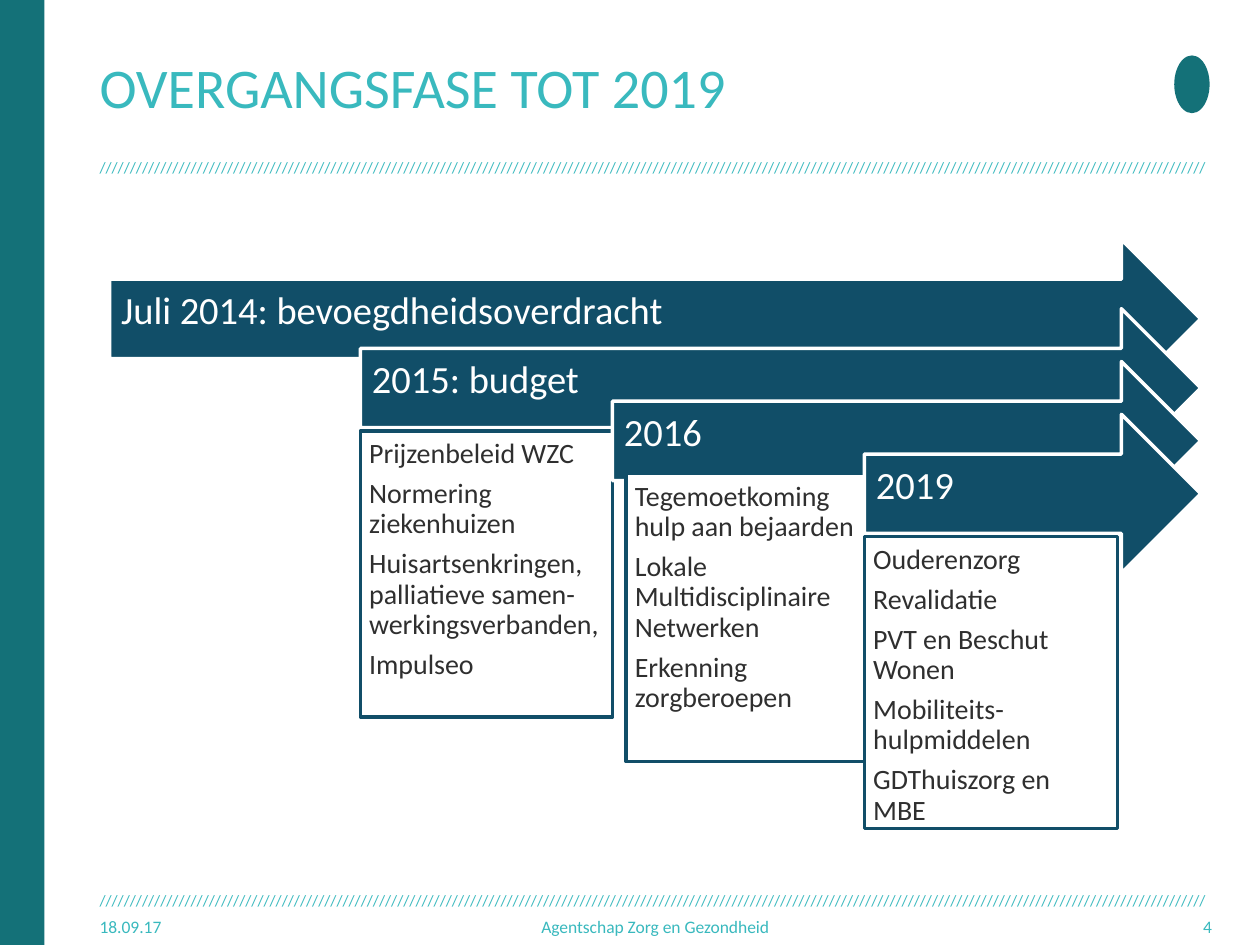
"""Build the slide on the transition phase until 2019."""
from pptx import Presentation
from pptx.dml.color import RGBColor
from pptx.enum.shapes import MSO_SHAPE
from pptx.enum.text import MSO_ANCHOR, PP_ALIGN
from pptx.util import Pt

RECT, OVAL, ARROW = MSO_SHAPE.RECTANGLE, MSO_SHAPE.OVAL, MSO_SHAPE.RIGHT_ARROW
TOP, MIDDLE = MSO_ANCHOR.TOP, MSO_ANCHOR.MIDDLE
LEFT, CENTER, RIGHT = PP_ALIGN.LEFT, PP_ALIGN.CENTER, PP_ALIGN.RIGHT

TEAL = RGBColor(0x14, 0x71, 0x78)
AQUA = RGBColor(0x39, 0xB9, 0xBE)
NAVY = RGBColor(0x11, 0x4E, 0x68)
INK = RGBColor(0x2F, 0x2F, 0x2F)
WHITE = RGBColor(0xFF, 0xFF, 0xFF)

ARROW_RIGHT, ARROW_HEIGHT = 686.2, 90.7
MARGIN = 56.9

ARROWS = [
    (62.6, 136.9, "Juli 2014: bevoegdheidsoverdracht", None, []),
    (206, 176.4, "2015: budget", (206, 246.2, 144, 163.6),
     ["Prijzenbeleid WZC", "Normering ziekenhuizen",
      "Huisartsenkringen, palliatieve samen-werkingsverbanden,", "Impulseo"]),
    (350, 206.6, "2016", (357.8, 270.6, 144, 164.7),
     ["Tegemoetkoming hulp aan bejaarden",
      "Lokale Multidisciplinaire Netwerken", "Erkenning zorgberoepen"]),
    (494, 236.8, "2019", (494, 306.6, 144.7, 166.9),
     ["Ouderenzorg", "Revalidatie", "PVT en Beschut Wonen",
      "Mobiliteits-hulpmiddelen", "GDThuiszorg en MBE"]),
]


class Deck:
    """Hold the style and the current slide."""

    font = "Calibri"

    def __init__(self, prs):
        self.slide = prs.slides.add_slide(prs.slide_layouts[5])

    def set_text(self, sp, lines, size, color, align=LEFT, anchor=TOP,
                 insets=(0, 0, 0, 0), wrap=True, flow=False):
        """Fill a shape with paragraphs."""
        tf = sp.text_frame
        tf.word_wrap, tf.vertical_anchor = wrap, anchor
        (tf.margin_left, tf.margin_top,
         tf.margin_right, tf.margin_bottom) = map(Pt, insets)
        tf.text = "\n".join(lines)
        for p in tf.paragraphs:
            p.alignment = align
            p.font.name, p.font.size = self.font, Pt(size)
            p.font.color.rgb = color
            if flow:
                p.line_spacing, p.space_after = 0.9, Pt(0.35 * size)

    def title(self, text, box):
        """Move and format the title placeholder."""
        sp = self.slide.shapes.title
        sp.left, sp.top, sp.width, sp.height = map(Pt, box)
        self.set_text(sp, [text], 32, AQUA, anchor=MIDDLE)

    def text(self, text, box, size, align=LEFT, anchor=MIDDLE, wrap=True):
        """Add a text box."""
        sp = self.slide.shapes.add_textbox(*map(Pt, box))
        self.set_text(sp, [text], size, AQUA, align, anchor, wrap=wrap)

    def shape(self, kind, box, fill, line=None):
        """Add a preset shape."""
        sp = self.slide.shapes.add_shape(kind, *map(Pt, box))
        sp.shadow.inherit = False
        sp.fill.solid()
        sp.fill.fore_color.rgb = fill
        if line is None:
            sp.line.fill.background()
        else:
            sp.line.color.rgb, sp.line.width = line, Pt(2)
        return sp

    def arrow(self, left, top, label):
        """Add a labelled arrow that ends at the common right edge."""
        box = (left, top, ARROW_RIGHT - left, ARROW_HEIGHT)
        sp = self.shape(ARROW, box, NAVY, WHITE)
        self.set_text(sp, [label], 22, WHITE, anchor=MIDDLE,
                      insets=(6.6, 6.6, 20, 14.4), flow=True)

    def panel(self, box, lines):
        """Add an outlined panel of paragraphs."""
        sp = self.shape(RECT, box, WHITE, NAVY)
        self.set_text(sp, lines, 16, INK, insets=(5, 5, 5, 5), flow=True)


def main():
    """Draw the slide and save it."""
    prs = Presentation()
    prs.slide_width, prs.slide_height = Pt(720), Pt(540)
    deck = Deck(prs)
    deck.shape(RECT, (0, 0, 25.4, 540), TEAL)
    for top in (509, 90):
        deck.text("/" * 182, (MARGIN, top, 640.8, 20), 9, anchor=TOP, wrap=False)
    deck.shape(OVAL, (671, 31.7, 20.2, 33), TEAL)
    deck.title("OVERGANGSFASE TOT 2019", (MARGIN, 9.4, 601.2, 79.2))
    for text, left, width, align in (
            ("18.09.17", MARGIN, 87, LEFT),
            ("Agentschap Zorg en Gezondheid", 190, 368.8, CENTER),
            ("4", 604, 88.5, RIGHT)):
        deck.text(text, (left, 519.2, width, 20.8), 10, align)
    for left, top, label, box, lines in ARROWS:
        deck.arrow(left, top, label)
        if box:
            deck.panel(box, lines)
    prs.save("out.pptx")


if __name__ == "__main__":
    main()
